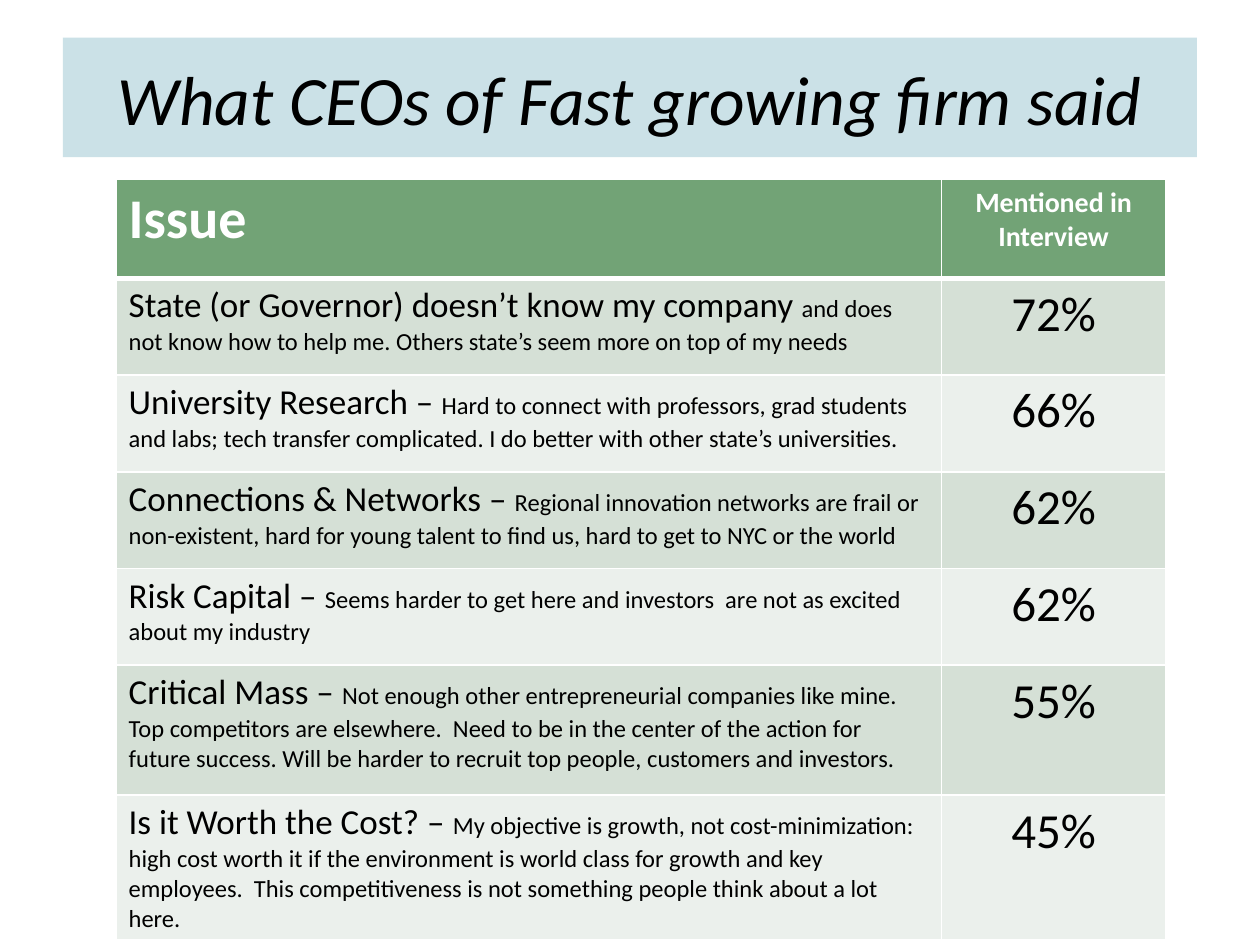
from typing import NamedTuple

from lxml.etree import SubElement
from pptx import Presentation
from pptx.dml.color import RGBColor
from pptx.enum.shapes import MSO_SHAPE as Shape
from pptx.enum.text import MSO_ANCHOR as Anchor, PP_ALIGN as Align
from pptx.oxml.ns import qn
from pptx.util import Cm, Pt

FONT = "Calibri"
BLACK = RGBColor(0x00, 0x00, 0x00)
WHITE = RGBColor(0xFF, 0xFF, 0xFF)
SKY = RGBColor(0xCB, 0xE1, 0xE7)
GREEN = RGBColor(0x72, 0xA3, 0x76)
BANDS = (RGBColor(0xD5, 0xE0, 0xD6), RGBColor(0xEB, 0xF0, 0xEC))


class Span(NamedTuple):
    text: str
    size: float
    color: RGBColor = BLACK
    bold: bool = False
    slant: bool = False


class Issue(NamedTuple):
    head: str
    note: str
    share: str
    high: float  # row height in cm


ISSUES = (
    Issue("State (or Governor) doesn’t know my company ",
          "and does not know how to help me. Others state’s seem more on top "
          "of my needs", "72%", 1.95),
    Issue("University Research – ",
          "Hard to connect with professors, grad students and labs; tech "
          "transfer complicated. I do better with other state’s "
          "universities.", "66%", 1.95),
    Issue("Connections & Networks – ",
          "Regional innovation networks are frail or non-existent, hard for "
          "young talent to find us, hard to get to NYC or the world",
          "62%", 1.95),
    Issue("Risk Capital – ",
          "Seems harder to get here and investors  are not as excited about "
          "my industry", "62%", 1.95),
    Issue("Critical Mass – ",
          "Not enough other entrepreneurial companies like mine.  Top "
          "competitors are elsewhere.  Need to be in the center of the action "
          "for  future success. Will be harder to recruit top people, "
          "customers and investors.", "55%", 2.62),
    Issue("Is it Worth the Cost? – ",
          "My objective is growth, not cost-minimization:  high cost worth it "
          "if the environment is world class for growth and key employees.  "
          "This competitiveness is not something people think about a lot "
          "here.", "45%", 2.39),
)


def write(frame, spans: tuple[Span, ...], align: Align) -> None:
    """Fill the first paragraph run by run."""
    para = frame.paragraphs[0]
    para.alignment = align
    for span in spans:
        run = para.add_run()
        run.text = span.text
        font = run.font
        font.name, font.size = FONT, Pt(span.size)
        font.bold, font.italic = span.bold, span.slant
        font.color.rgb = span.color


def edge(cell, side: str, width: float) -> None:
    """Draw one white cell border."""
    line = SubElement(cell._tc.get_or_add_tcPr(), qn(f"a:ln{side}"),
                      w=str(Pt(width)))
    fill = SubElement(line, qn("a:solidFill"))
    SubElement(fill, qn("a:srgbClr"), val=str(WHITE))


def fill_row(cells, left: tuple[Span, ...], right: Span, color: RGBColor,
             top: float = 1, base: float = 1) -> None:
    """Write and style the two cells of a row."""
    pairs = ((left, Align.LEFT), ((right,), Align.CENTER))
    for cell, (spans, align) in zip(cells, pairs):
        write(cell.text_frame, spans, align)
        for side, width in (("L", 1), ("R", 1), ("T", top), ("B", base)):
            edge(cell, side, width)
        cell.fill.solid()
        cell.fill.fore_color.rgb = color


def add_title(slide) -> None:
    box = slide.shapes.add_shape(Shape.RECTANGLE, Cm(1.27), Cm(0.76),
                                 Cm(22.86), Cm(2.41))
    box.shadow.inherit = False
    box.fill.solid()
    box.fill.fore_color.rgb = SKY
    box.line.fill.background()
    frame = box.text_frame
    frame.word_wrap = True
    frame.vertical_anchor = Anchor.MIDDLE
    span = Span("What CEOs of Fast growing firm said", 39.6, slant=True)
    write(frame, (span,), Align.CENTER)


def add_issues(slide) -> None:
    highs = [2.0] + [issue.high for issue in ISSUES]
    table = slide.shapes.add_table(len(highs), 2, Cm(2.34), Cm(3.61),
                                   Cm(21.16), Cm(sum(highs))).table
    for col, width in zip(table.columns, (16.64, 4.52)):
        col.width = Cm(width)
    for row, high in zip(table.rows, highs):
        row.height = Cm(high)

    # Header row, set off by a thick rule
    rows = [row.cells for row in table.rows]
    fill_row(rows[0], (Span("Issue", 32, WHITE, True),),
             Span("Mentioned in Interview", 16, WHITE, True), GREEN, base=3)

    # Banded issue rows
    for i, (cells, issue) in enumerate(zip(rows[1:], ISSUES)):
        left = (Span(issue.head, 20), Span(issue.note, 14))
        fill_row(cells, left, Span(issue.share, 28), BANDS[i % 2],
                 top=1 if i else 3)


def main() -> None:
    deck = Presentation()
    deck.slide_width, deck.slide_height = Cm(25.4), Cm(19.05)
    slide = deck.slides.add_slide(deck.slide_layouts[6])
    add_title(slide)
    add_issues(slide)
    deck.save("out.pptx")


if __name__ == "__main__":
    main()
